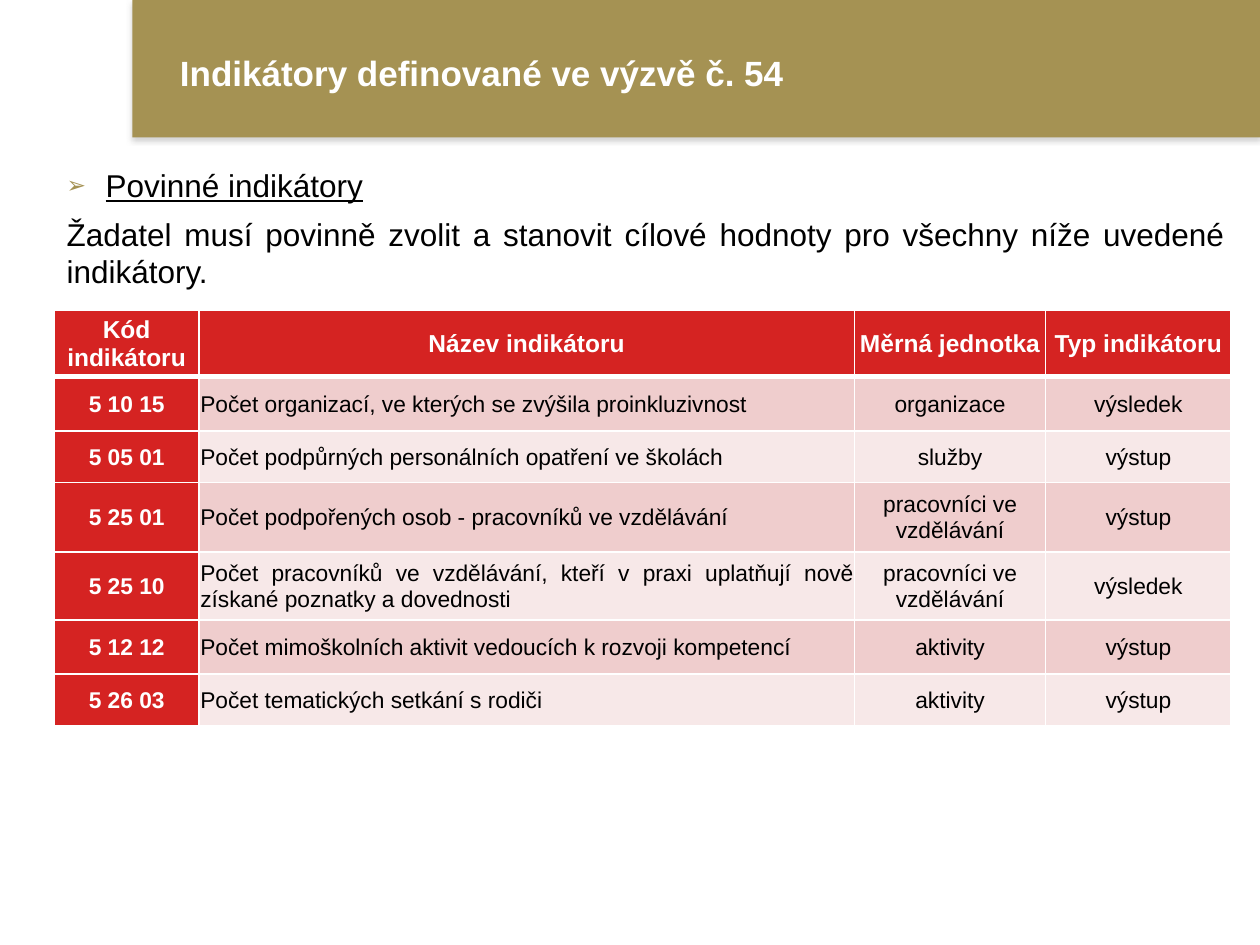
import pptx
import pptx.util
import pptx.oxml
import pptx.oxml.ns
import pptx.dml.color
import pptx.enum.shapes
import pptx.enum.text

Inches, Pt = pptx.util.Inches, pptx.util.Pt
ALIGN = pptx.enum.text.PP_ALIGN
MIDDLE = pptx.enum.text.MSO_ANCHOR.MIDDLE

# Content
TITLE = "Indikátory definované ve výzvě č. 54"
SUBHEADING = "Povinné indikátory"
INTRO = "Žadatel musí povinně zvolit a stanovit cílové hodnoty pro všechny níže uvedené indikátory."
HEADERS = ("Kód indikátoru", "Název indikátoru", "Měrná jednotka", "Typ indikátoru")
INDICATORS = [
    ("5 10 15", "Počet organizací, ve kterých se zvýšila proinkluzivnost", "organizace", "výsledek"),
    ("5 05 01", "Počet podpůrných personálních opatření ve školách", "služby", "výstup"),
    ("5 25 01", "Počet podpořených osob - pracovníků ve vzdělávání", "pracovníci ve vzdělávání", "výstup"),
    ("5 25 10", "Počet pracovníků ve vzdělávání, kteří v praxi uplatňují nově získané poznatky a dovednosti",
     "pracovníci ve vzdělávání", "výsledek"),
    ("5 12 12", "Počet mimoškolních aktivit vedoucích k rozvoji kompetencí", "aktivity", "výstup"),
    ("5 26 03", "Počet tematických setkání s rodiči", "aktivity", "výstup"),
]
COLUMN_WIDTHS = (1.15, 5.2, 1.52, 1.47)
ROW_HEIGHTS = (0.53, 0.43, 0.41, 0.55, 0.54, 0.43, 0.41)

THEME = {
    "font": "Arial",
    "gold": "A59253", "red": "D52322", "bands": ("EFCDCD", "F7E8E8"),
    "white": "FFFFFF", "black": "000000", "shadow": "808080",
    "title": 20, "body": 18, "header": 14, "cell": 13,
}


def rgb(name):
    return pptx.dml.color.RGBColor.from_string(name)


def xml(tag, content, attributes=""):
    namespace = pptx.oxml.ns.nsdecls("a")
    return pptx.oxml.parse_xml(f"<a:{tag} {namespace} {attributes}>{content}</a:{tag}>")


def color_xml(color, inner=""):
    return f'<a:srgbClr val="{color}">{inner}</a:srgbClr>'


def write(para, text, size, color, align=ALIGN.LEFT, **extras):
    span = para.add_run()
    span.text = text
    para.alignment = align
    formats = {"name": THEME["font"], "size": Pt(size), "bold": False, **extras}
    for name, value in formats.items():
        setattr(span.font, name, value)
    span.font.color.rgb = rgb(color)


def add_text_frame(page, left, top, width, height):
    box = page.shapes.add_textbox(Inches(left), Inches(top), Inches(width), Inches(height))
    box.text_frame.word_wrap = True
    return box.text_frame


def add_banner(page):
    banner = page.shapes.add_shape(pptx.enum.shapes.MSO_SHAPE.RECTANGLE,
                                   Inches(1.05), 0, Inches(8.95), Inches(1.09))
    banner.fill.solid()
    banner.fill.fore_color.rgb = rgb(THEME["gold"])
    banner.line.fill.background()
    banner.shadow.inherit = False
    effects = banner._element.spPr.find(pptx.oxml.ns.qn("a:effectLst"))
    shade = color_xml(THEME["shadow"], '<a:alpha val="35000"/>')
    effects.append(xml("outerShdw", shade,
                       f'blurRad="{Pt(3.1)}" dist="{Pt(1.8)}" dir="5400000" rotWithShape="0"'))

    frame = add_text_frame(page, 1.33, 0.4, 8.17, 0.35)
    frame.vertical_anchor = MIDDLE
    write(frame.paragraphs[0], TITLE, THEME["title"], THEME["white"], bold=True)


def add_intro(page):
    frame = add_text_frame(page, 0.43, 1.27, 9.39, 1.19)
    bullet = frame.paragraphs[0]
    properties = bullet._p.get_or_add_pPr()
    properties.set("marL", str(Inches(0.31)))
    properties.set("indent", str(-Inches(0.31)))
    for tag, content, attributes in (
        ("buClr", color_xml(THEME["gold"]), ""),
        ("buSzPct", "", 'val="74000"'),
        ("buFont", "", f'typeface="{THEME["font"]}"'),
        ("buChar", "", 'char="➢"'),
    ):
        properties.append(xml(tag, content, attributes))
    write(bullet, SUBHEADING, THEME["body"], THEME["black"], underline=True)
    bullet.space_after = Pt(2)

    intro = frame.add_paragraph()
    intro.space_before = Pt(4)
    write(intro, INTRO, THEME["body"], THEME["black"], ALIGN.JUSTIFY)


def add_borders(cell, row):
    widths = {"lnL": 1, "lnR": 1, "lnT": 3 if row == 1 else 1, "lnB": 3 if row == 0 else 1}
    properties = cell._tc.get_or_add_tcPr()
    for tag, width in widths.items():
        line = f'<a:solidFill>{color_xml(THEME["white"])}</a:solidFill>'
        properties.append(xml(tag, line, f'w="{Pt(width)}"'))


def add_indicator_table(page):
    rows = [HEADERS, *INDICATORS]
    table = page.shapes.add_table(len(rows), len(HEADERS), Inches(0.43), Inches(2.46),
                                  Inches(sum(COLUMN_WIDTHS)), Inches(sum(ROW_HEIGHTS))).table
    for column, width in zip(table.columns, COLUMN_WIDTHS):
        column.width = Inches(width)
    for table_row, height in zip(table.rows, ROW_HEIGHTS):
        table_row.height = Inches(height)

    cell_format = {"margin_left": Inches(0.01), "margin_right": Inches(0.01),
                   "margin_top": Inches(0.01), "margin_bottom": 0, "vertical_anchor": MIDDLE}
    for row, texts in enumerate(rows):
        for column, text in enumerate(texts):
            cell = table.cell(row, column)
            for name, value in cell_format.items():
                setattr(cell, name, value)
            add_borders(cell, row)
            heading = row == 0 or column == 0
            cell.fill.solid()
            cell.fill.fore_color.rgb = rgb(THEME["red"] if heading else THEME["bands"][(row - 1) % 2])
            write(cell.text_frame.paragraphs[0], text,
                  THEME["header" if row == 0 else "cell"],
                  THEME["white" if heading else "black"],
                  ALIGN.JUSTIFY if column == 1 and row > 0 else ALIGN.CENTER,
                  bold=heading)


def main():
    deck = pptx.Presentation()
    deck.slide_width, deck.slide_height = Inches(10), Inches(7.5)
    page = deck.slides.add_slide(deck.slide_layouts[6])
    add_banner(page)
    add_intro(page)
    add_indicator_table(page)
    deck.save("out.pptx")


if __name__ == "__main__":
    main()
